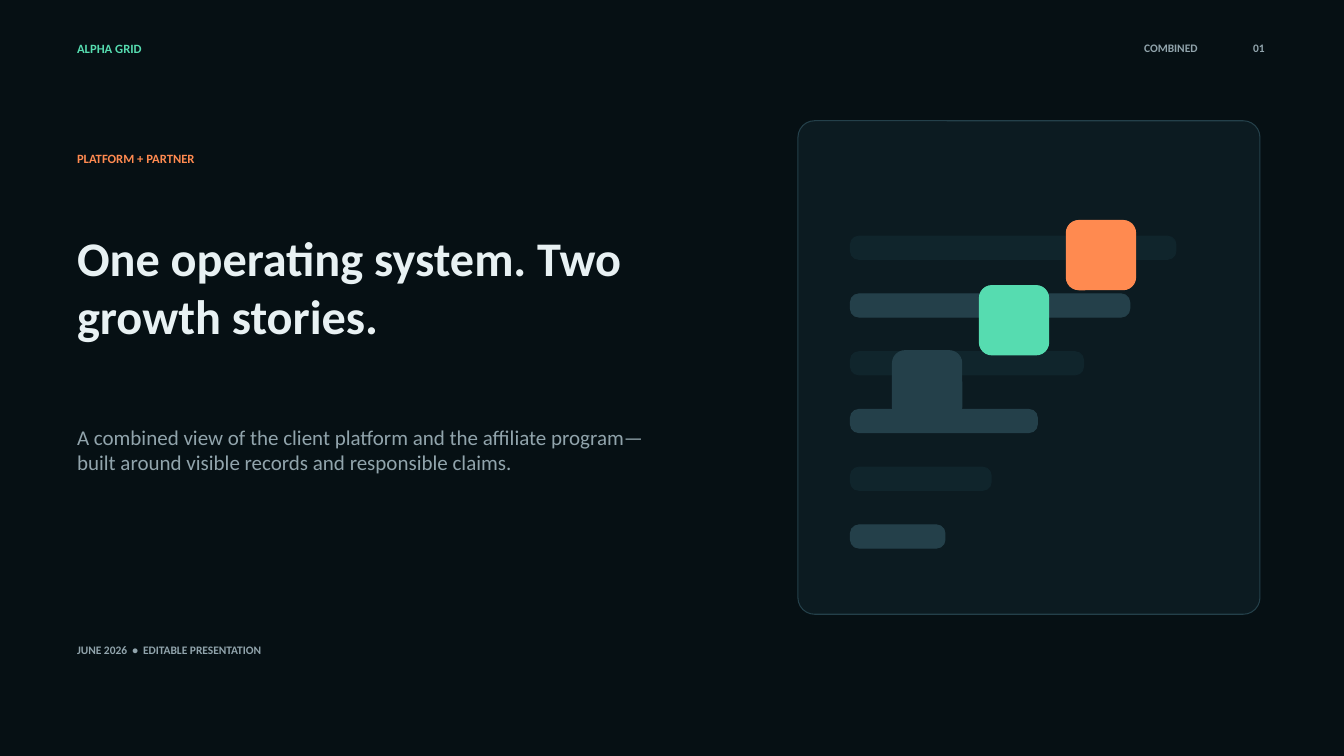
from pptx import Presentation
from pptx import util as u
from pptx.dml.color import RGBColor
from pptx.enum import shapes, text

HUES = {
    "night": "061014", "panel": "0C1B21", "dim": "10252C", "slate": "24404A",
    "mint": "56DCB0", "coral": "FF8A50", "pale": "E8F1F3", "mist": "91A4AC",
}
LEFT = 48


def rgb(hue):
    return RGBColor.from_string(HUES[hue])


class Deck:
    """Holds the style and the current slide; lengths are in points."""

    def __init__(self, wide, high, font):
        self.prs = Presentation()
        self.prs.slide_width, self.prs.slide_height = u.Pt(wide), u.Pt(high)
        self.font = font

    def page(self, hue):
        self.slide = self.prs.slides.add_slide(self.prs.slide_layouts[6])
        fill = self.slide.background.fill
        fill.solid()
        fill.fore_color.rgb = rgb(hue)

    def label(self, words, *box, size=8.2, hue="mist", bold=True, right=False):
        area = self.slide.shapes.add_textbox(*map(u.Pt, box))
        frame = area.text_frame
        frame.word_wrap = True
        frame.vertical_anchor = text.MSO_ANCHOR.MIDDLE
        para = frame.paragraphs[0]
        para.alignment = text.PP_ALIGN.RIGHT if right else text.PP_ALIGN.LEFT
        run = para.add_run()
        run.text = words
        run.font.name, run.font.size, run.font.bold = self.font, u.Pt(size), bold
        run.font.color.rgb = rgb(hue)

    def tile(self, *box, curve, hue, edge=None):
        """Draw a rounded box, outlined in its own colour unless edge is given."""
        kind = shapes.MSO_SHAPE.ROUNDED_RECTANGLE
        item = self.slide.shapes.add_shape(kind, *map(u.Pt, box))
        item.adjustments[0] = curve
        item.shadow.inherit = False
        item.fill.solid()
        item.fill.fore_color.rgb = rgb(hue)
        item.line.color.rgb = rgb(edge or hue)
        item.line.width = u.Pt(0.75)


def header(deck):
    top, high = 25.5, 18
    deck.label("ALPHA GRID", LEFT, top, 172.5, high, size=9, hue="mint")
    deck.label("COMBINED", 660, top, 202.5, high, right=True)
    deck.label("01", 870, top, 40.5, high, right=True)


def artwork(deck):
    deck.tile(570, 86.25, 330, 352.5, curve=0.036, hue="panel", edge="slate")
    for row in range(6):
        hue = "dim" if row % 2 else "slate"
        deck.tile(607.5, 375 - 41.25 * row, 67.5 + 33 * row, 16.5,
                  curve=0.364, hue=hue)
    for step, hue in enumerate(("slate", "mint", "coral")):
        deck.tile(637.5 + 62.1 * step, 250.5 - 46.5 * step, 49.5, 49.5,
                  curve=0.18, hue=hue)


def story(deck):
    deck.label("PLATFORM + PARTNER", LEFT, 103.5, 435, 19.5, size=9, hue="coral")
    deck.label("One operating system. Two growth stories.",
               LEFT, 139, 465, 131, size=34.5, hue="pale")
    deck.label("A combined view of the client platform and the affiliate "
               "program—built around visible records and responsible claims.",
               LEFT, 283.5, 442.5, 75, size=15, bold=False)
    deck.label("JUNE 2026  •  EDITABLE PRESENTATION", LEFT, 453.75, 420, 21)


def main():
    deck = Deck(960, 540, "Calibri")
    deck.page("night")
    header(deck)
    artwork(deck)
    story(deck)
    deck.prs.save("out.pptx")


if __name__ == "__main__":
    main()
